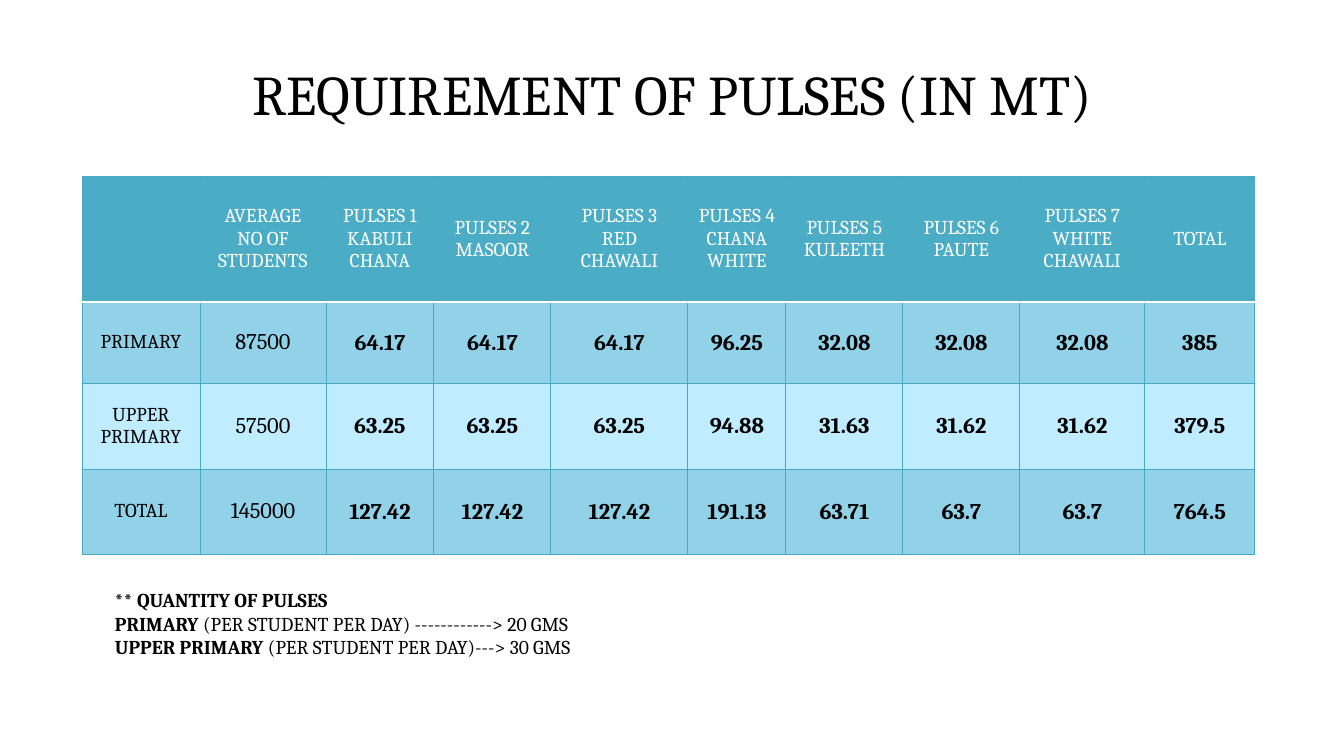
from dataclasses import dataclass

from lxml import etree
from pptx import Presentation
from pptx import util as u
from pptx.dml.color import RGBColor
from pptx.enum import text
from pptx.oxml.ns import qn

EMU_PER_PX = 914400 / 100.8


@dataclass(frozen=True)
class Theme:
    """Colours, font and type sizes of the slide."""
    font: str = "Cambria"
    ink: str = "000000"
    paper: str = "FFFFFF"
    header: str = "4BACC6"
    dark_band: str = "91D2E8"
    light_band: str = "BFECFF"
    grid: str = "46AAC5"
    title: int = 40
    figure: int = 16
    label: int = 14


THEME = Theme()
CENTER = text.PP_ALIGN.CENTER
MIDDLE = text.MSO_ANCHOR.MIDDLE
COLUMN_WIDTHS = [118, 126, 108, 117, 137, 98, 117, 117, 125, 110]
ROW_HEIGHTS = [126, 81, 86, 85]
HEADINGS = [
    "", "AVERAGE NO OF STUDENTS", "PULSES 1\nKABULI CHANA", "PULSES 2\nMASOOR",
    "PULSES 3\nRED\nCHAWALI", "PULSES 4\nCHANA WHITE", "PULSES 5\nKULEETH",
    "PULSES 6\nPAUTE", "PULSES 7\nWHITE CHAWALI", "TOTAL",
]
REQUIREMENTS = [
    ["PRIMARY", "87500", "64.17", "64.17", "64.17", "96.25",
     "32.08", "32.08", "32.08", "385"],
    ["UPPER PRIMARY", "57500", "63.25", "63.25", "63.25", "94.88",
     "31.63", "31.62", "31.62", "379.5"],
    ["TOTAL", "145000", "127.42", "127.42", "127.42", "191.13",
     "63.71", "63.7", "63.7", "764.5"],
]
QUANTITY_NOTES = [
    [("** QUANTITY OF PULSES", True)],
    [("PRIMARY", True), (" (PER STUDENT PER DAY) ------------> 20 GMS", False)],
    [("UPPER PRIMARY", True), (" (PER STUDENT PER DAY)---> 30 GMS", False)],
]


def px(length):
    """Turn pixels into EMU."""
    return u.Emu(round(length * EMU_PER_PX))


def write(frame, content, size, color=THEME.ink, bold=False, align=None):
    """Fill a text frame from a string or from lists of (text, bold) runs."""
    if isinstance(content, str):
        content = [[(line, bold)] for line in content.split("\n")]
    for index, runs in enumerate(content):
        paragraph = frame.add_paragraph() if index else frame.paragraphs[0]
        paragraph.alignment = align
        for words, heavy in runs:
            run = paragraph.add_run()
            run.text = words
            run.font.name = THEME.font
            run.font.size = u.Pt(size)
            run.font.bold = heavy
            run.font.color.rgb = RGBColor.from_string(color)


def set_margins(target, left, top, right, bottom):
    """Set the inner margins of a cell or text frame in pixels."""
    target.margin_left, target.margin_top = px(left), px(top)
    target.margin_right, target.margin_bottom = px(right), px(bottom)


def add_border(cell, side, color, width):
    """Draw one side of a cell; side is L, R, T or B."""
    properties = cell._tc.get_or_add_tcPr()
    line = etree.SubElement(properties, qn(f"a:ln{side}"), w=str(u.Pt(width)))
    fill = etree.SubElement(line, qn("a:solidFill"))
    etree.SubElement(fill, qn("a:srgbClr"), val=color)


def style_cell(cell, row):
    """Give a cell its borders, band fill and vertical centring."""
    for side in "LRTB":
        under_header = (row, side) in ((0, "B"), (1, "T"))
        add_border(cell, side, THEME.paper if under_header else THEME.grid,
                   2 if under_header else 0.75)
    band = THEME.dark_band if row % 2 else THEME.light_band
    cell.fill.solid()
    cell.fill.fore_color.rgb = RGBColor.from_string(band if row else THEME.header)
    cell.vertical_anchor = MIDDLE


def add_title(slide, left, top, width, height):
    """Place and format the slide title."""
    title = slide.shapes.title
    title.left, title.top, title.width, title.height = map(
        px, (left, top, width, height))
    title.text_frame.vertical_anchor = MIDDLE
    write(title.text_frame, "REQUIREMENT OF PULSES (IN MT)", THEME.title, align=CENTER)


def add_requirement_table(slide, left, top):
    """Build the table of pulses needed by each school level."""
    table = slide.shapes.add_table(
        len(ROW_HEIGHTS), len(COLUMN_WIDTHS), px(left), px(top),
        px(sum(COLUMN_WIDTHS)), px(sum(ROW_HEIGHTS))).table
    table.horz_banding = False
    for column, width in zip(table.columns, COLUMN_WIDTHS):
        column.width = px(width)
    for table_row, height in zip(table.rows, ROW_HEIGHTS):
        table_row.height = px(height)
    for row, values in enumerate([HEADINGS, *REQUIREMENTS]):
        for column, value in enumerate(values):
            cell = table.cell(row, column)
            style_cell(cell, row)
            is_quantity = row > 0 and column > 1
            if is_quantity:
                set_margins(cell, 1, 1, 1, 0)
            if value:
                write(cell.text_frame, value,
                      THEME.figure if row and column else THEME.label,
                      color=THEME.ink if row else THEME.paper,
                      bold=is_quantity, align=CENTER)


def add_quantity_notes(slide, left, top, width, height):
    """Add the daily quantity per student below the table."""
    frame = slide.shapes.add_textbox(*map(px, (left, top, width, height))).text_frame
    frame.word_wrap = True
    set_margins(frame, 10, 29, 10, 5)
    write(frame, QUANTITY_NOTES, THEME.label)


def main():
    """Build and save the slide."""
    presentation = Presentation()
    presentation.slide_width, presentation.slide_height = px(1344), px(756)
    slide = presentation.slides.add_slide(presentation.slide_layouts[5])
    add_title(slide, 67, 30, 1210, 126)
    add_requirement_table(slide, 82, 176)
    add_quantity_notes(slide, 105, 559, 798, 129)
    presentation.save("out.pptx")


if __name__ == "__main__":
    main()
